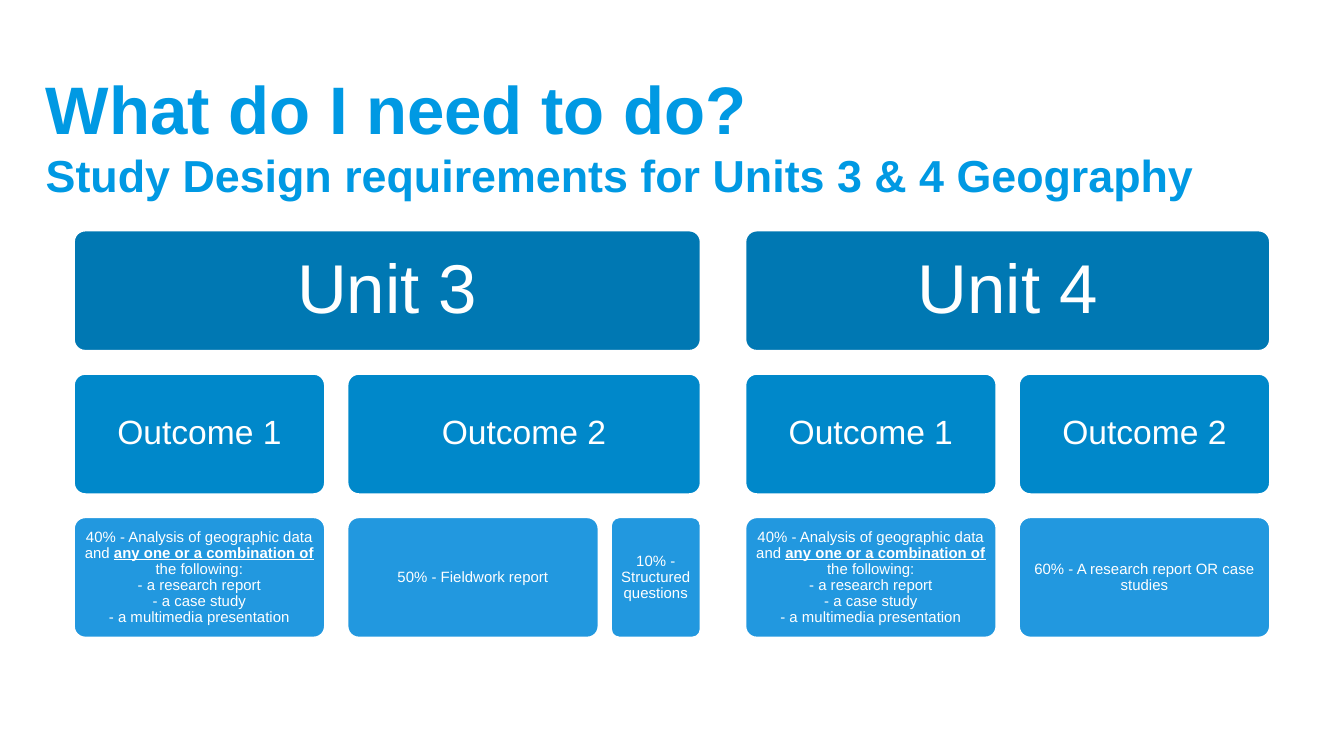
"""Build the assessment overview slide for Units 3 & 4 Geography."""
from copy import deepcopy

from pptx import Presentation
from pptx.dml.color import RGBColor as RGB
from pptx.enum.shapes import MSO_SHAPE as SHAPE
from pptx.enum.text import MSO_ANCHOR as ANCHOR, MSO_AUTO_SIZE as AUTO, PP_ALIGN as ALIGN
from pptx.util import Cm, Pt

TITLE = [
    ("What do I need to do?\n", {"size": Pt(36)}),
    ("Study Design requirements for Units 3 & 4 Geography", {"size": Pt(24)}),
]
ANALYSIS = [
    ("40% - Analysis of geographic data and ", {}),
    ("any one or a combination of ", {"bold": True, "underline": True}),
    ("the following:\n- a research report\n- a case study\n- a multimedia presentation", {}),
]
WIDE, NARROW = 4.78, 1.73
UNITS = [
    ("Unit 3", [
        ("Outcome 1", [(ANALYSIS, WIDE)]),
        ("Outcome 2", [
            ([("50% - Fieldwork report", {})], WIDE),
            ([("10% - Structured questions", {})], NARROW),
        ]),
    ]),
    ("Unit 4", [
        ("Outcome 1", [(ANALYSIS, WIDE)]),
        ("Outcome 2", [([("60% - A research report OR case studies", {})], WIDE)]),
    ]),
]
THEME = {
    "font": "Arial",
    "title": RGB.from_string("0099E3"),
    "white": RGB.from_string("FFFFFF"),
    "levels": [
        {"fill": "0078B3", "size": Pt(37), "inset": Cm(0.38)},
        {"fill": "0088CA", "size": Pt(18), "inset": Cm(0.18)},
        {"fill": "2298DF", "size": Pt(8), "inset": Cm(0.08)},
    ],
}
LEFT, TOP, HEIGHT, ROW_STEP = 1.38, 4.34, 2.31, 2.71
UNIT_GAP, OUTCOME_GAP, TASK_GAP = 0.81, 0.39, 0.2


def set_all(obj, values):
    for name, value in values.items():
        setattr(obj, name, value)


def write(p, runs, color, base):
    for text, extra in runs:
        for i, line in enumerate(text.split("\n")):
            if i:
                p.add_line_break()
                p._p[-1].append(deepcopy(r._r.rPr))
            if line:
                r = p.add_run()
                r.text = line
                set_all(r.font, {"name": THEME["font"], **base, **extra})
                r.font.color.rgb = color


def add_box(s, level, left, width, runs):
    style = THEME["levels"][level]
    sp = s.shapes.add_shape(SHAPE.ROUNDED_RECTANGLE, Cm(left), Cm(TOP + level * ROW_STEP),
                            Cm(width), Cm(HEIGHT))
    sp.adjustments[0] = 0.1
    sp.shadow.inherit = False
    sp.fill.solid()
    sp.fill.fore_color.rgb = RGB.from_string(style["fill"])
    sp.line.color.rgb = THEME["white"]
    sp.line.width = Pt(2)
    tf = sp.text_frame
    sides = ("left", "top", "right", "bottom")
    set_all(tf, {f"margin_{side}": style["inset"] for side in sides})
    set_all(tf, {"word_wrap": True, "vertical_anchor": ANCHOR.MIDDLE})
    p = tf.paragraphs[0]
    set_all(p, {"alignment": ALIGN.CENTER, "line_spacing": 0.9})
    write(p, runs, THEME["white"], {"size": style["size"]})


def add_title(s):
    title = s.shapes.title
    set_all(title, {"left": Cm(0.61), "top": Cm(1.35), "width": Cm(24.2), "height": Cm(2.39)})
    tf = title.text_frame
    set_all(tf, {"word_wrap": True, "auto_size": AUTO.NONE, "vertical_anchor": ANCHOR.MIDDLE})
    p = tf.paragraphs[0]
    p.alignment = ALIGN.LEFT
    write(p, TITLE, THEME["title"], {"bold": True})


def add_units(s):
    x = LEFT
    for unit, outcomes in UNITS:
        unit_left = x
        for outcome, tasks in outcomes:
            outcome_left = x
            for runs, width in tasks:
                add_box(s, 2, x, width, runs)
                x += width + TASK_GAP
            x -= TASK_GAP
            add_box(s, 1, outcome_left, x - outcome_left, [(outcome, {})])
            x += OUTCOME_GAP
        x -= OUTCOME_GAP
        add_box(s, 0, unit_left, x - unit_left, [(unit, {})])
        x += UNIT_GAP


def main():
    prs = Presentation()
    set_all(prs, {"slide_width": Cm(25.4), "slide_height": Cm(14.29)})
    s = prs.slides.add_slide(prs.slide_layouts[5])
    add_title(s)
    add_units(s)
    prs.save("out.pptx")


if __name__ == "__main__":
    main()
